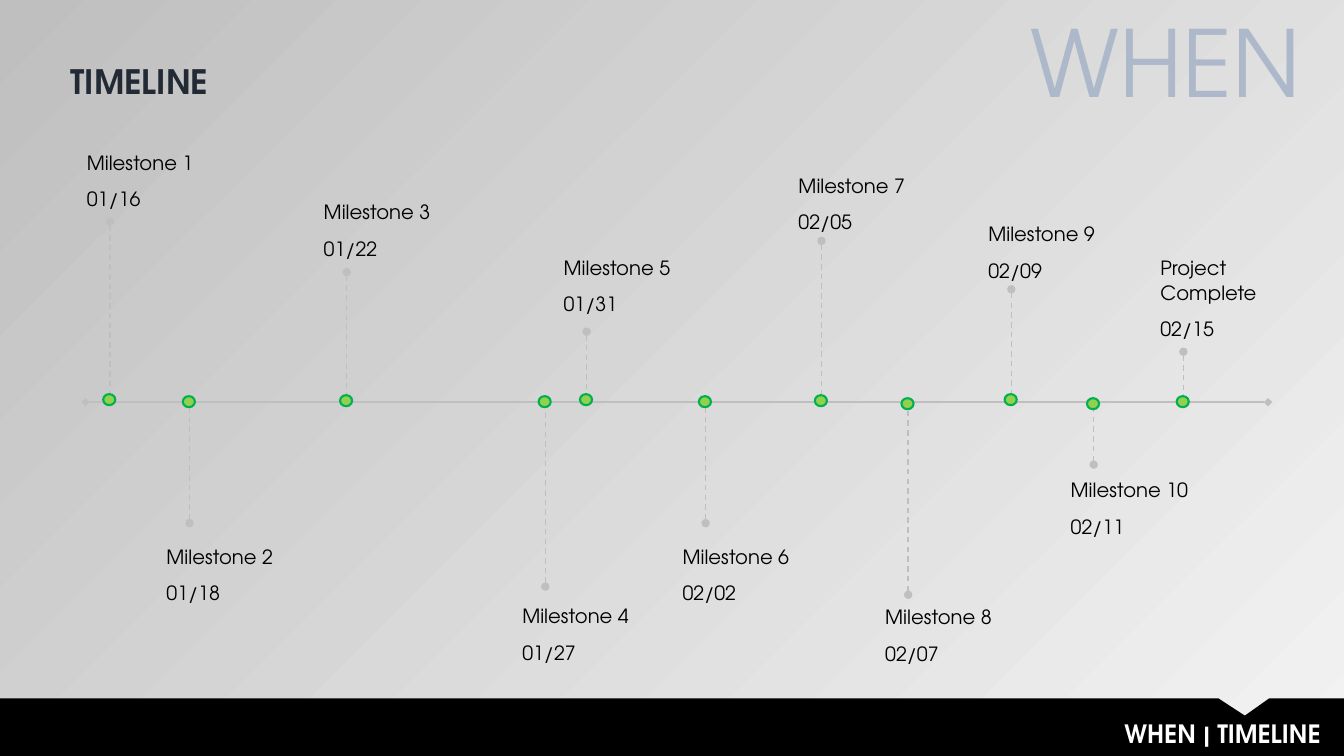
from pptx import Presentation
from pptx.dml.color import RGBColor
from pptx.enum.dml import MSO_LINE
from pptx.enum.shapes import MSO_CONNECTOR, MSO_SHAPE
from pptx.enum.text import MSO_ANCHOR, PP_ALIGN
from pptx.oxml.ns import qn
from pptx.util import Inches, Pt
from lxml.etree import SubElement

FONT = "TeX Gyre Adventor"
HEX = {"pale": "F2F2F2", "grey": "BFBFBF", "black": "000000", "white": "FFFFFF",
       "mist": "ADB9CA", "navy": "222A35", "lime": "92D050", "green": "00B050"}
INK = {name: RGBColor.from_string(code) for name, code in HEX.items()}

deck = Presentation()
deck.slide_width, deck.slide_height = Inches(13.33), Inches(7.5)
# Grid of 40 columns by 30 rows
COL, ROW = deck.slide_width / 40, deck.slide_height / 30
slide = deck.slides.add_slide(deck.slide_layouts[5])
shapes = slide.shapes


def write(box, place, text, size, ink, bold=False, align=PP_ALIGN.LEFT):
    x, y, w, h = place
    box.left, box.top = int(x * COL), int(y * ROW)
    box.width, box.height = int(w * COL), int(h * ROW)
    frame = box.text_frame
    frame.text = text
    frame.word_wrap = True
    frame.vertical_anchor = MSO_ANCHOR.TOP
    for para in frame.paragraphs:
        para.alignment = align
        font = para.runs[0].font
        font.name, font.size, font.bold = FONT, Pt(size), bold
        font.color.rgb = INK[ink]
    return frame


def rule(x1, y1, x2, y2, width, tip):
    line = shapes.add_connector(MSO_CONNECTOR.STRAIGHT, int(x1 * COL), int(y1 * ROW),
                                int(x2 * COL), int(y2 * ROW))
    line.line.color.rgb = INK["grey"]
    line.line.width = Pt(width)
    if tip == "oval":
        line.line.dash_style = MSO_LINE.DASH
    props = line.element.spPr
    for end in ("a:headEnd", "a:tailEnd"):
        SubElement(props.find(qn("a:ln")), qn(end), type=tip)
    SubElement(props, qn("a:effectLst"))


# Background
fill = slide.background.fill
fill.gradient()
fill.gradient_angle = 135
for stop, ink, pos in zip(fill.gradient_stops, ("pale", "grey"), (0, 1)):
    stop.color.rgb = INK[ink]
    stop.position = pos

# Footer band with a notch
edge = [(0, 27.72), (36.27, 27.72), (37.05, 28.4), (37.77, 27.72),
        (40, 27.72), (40, 30), (0, 30)]
dots = [(int(x * COL), int(y * ROW)) for x, y in edge]
path = shapes.build_freeform(*dots[0])
path.add_line_segments(dots[1:], close=True)
band = path.convert_to_shape()
band.shadow.inherit = False
band.fill.solid()
band.fill.fore_color.rgb = INK["black"]
band.line.fill.background()

# Headings
write(shapes.title, (1.8, 2.2, 26.7, 2), "TIMELINE", 24, "navy", True)
write(shapes.add_textbox(0, 0, 0, 0), (12.42, 28.32, 27.18, 1.6),
      "WHEN | TIMELINE", 18, "white", True, PP_ALIGN.RIGHT)
write(shapes.add_textbox(0, 0, 0, 0), (27.27, 0, 11.73, 4.84),
      "WHEN", 66, "mist", align=PP_ALIGN.RIGHT)

# Time axis
rule(2.55, 15.96, 37.74, 15.96, 1.5, "diamond")

# Milestones: name, date, column, then rows of label top, far end and near end
marks = [
    ("Milestone 1", "01/16", 3.27, 5.72, 8.8, 15.8),
    ("Milestone 2", "01/18", 5.64, 21.36, 20.76, 15.88),
    ("Milestone 3", "01/22", 10.32, 7.68, 10.8, 15.84),
    ("Milestone 4", "01/27", 16.23, 23.72, 23.28, 15.88),
    ("Milestone 5", "01/31", 17.46, 9.88, 13.16, 15.8),
    ("Milestone 6", "02/02", 21, 21.36, 20.76, 15.88),
    ("Milestone 7", "02/05", 24.45, 6.64, 9.56, 15.84),
    ("Milestone 8", "02/07", 27.03, 23.76, 23.6, 15.96),
    ("Milestone 9", "02/09", 30.1, 8.56, 11.48, 15.8),
    ("Milestone 10", "02/11", 32.55, 18.72, 18.44, 15.96),
    ("Project Complete", "02/15", 35.22, 9.88, 13.96, 15.88),
]
for name, date, x, top, far, near in marks:
    wide = 5.64 if name.startswith("Mile") else 3.57
    frame = write(shapes.add_textbox(0, 0, 0, 0), (x - 0.98, top, wide, 2.52),
                  f"{name}\n{date}", 14, "black")
    for para in frame.paragraphs:
        para.line_spacing = 1.07
        para.space_after = Pt(8)
    rule(x, far, x, near, 1, "oval")
    dot = shapes.add_shape(MSO_SHAPE.OVAL, int((x - 0.2) * COL), int((near - 0.16) * ROW),
                           int(0.36 * COL), int(0.44 * ROW))
    dot.shadow.inherit = False
    dot.fill.solid()
    dot.fill.fore_color.rgb = INK["lime"]
    dot.line.color.rgb = INK["green"]
    dot.line.width = Pt(1.5)

deck.save("out.pptx")
